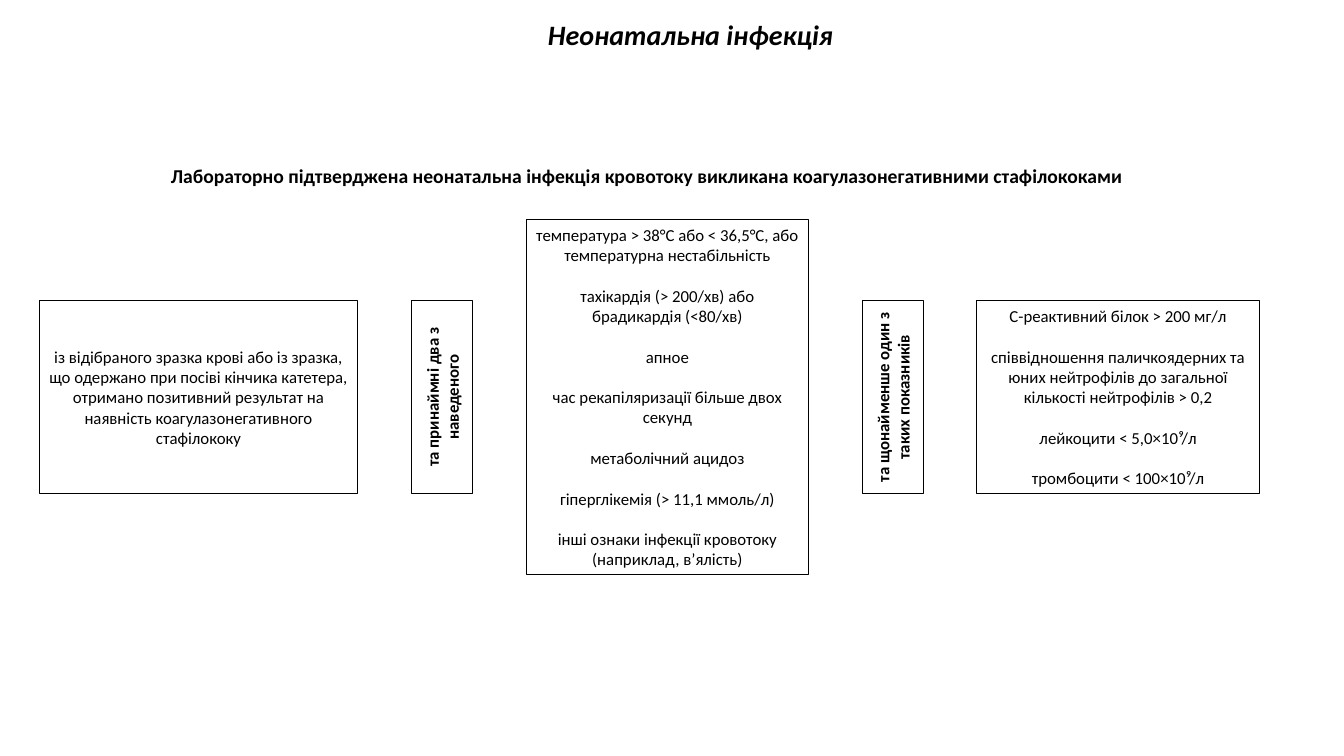
from pptx import Presentation
from pptx.dml.color import RGBColor
from pptx.enum.shapes import MSO_SHAPE
from pptx.enum.text import MSO_ANCHOR, PP_ALIGN
from pptx.util import Inches, Pt

BLACK = RGBColor(0x00, 0x00, 0x00)
FONT = "Calibri"
CRITERIA_GAP = Pt(14.6)

LEFT_MARGIN = 0.39
COLUMN_GAP = 0.53
MIDDLE_Y = 3.94

TITLE = "Неонатальна інфекція"
SUBTITLE = ("Лабораторно підтверджена неонатальна інфекція кровотоку "
            "викликана коагулазонегативними стафілококами ")

CULTURE = ["із відібраного зразка крові або із зразка, що одержано при посіві "
           "кінчика катетера, отримано позитивний результат на наявність "
           "коагулазонегативного стафілококу"]
SIGNS = [
    "температура > 38°С або < 36,5°С, або температурна нестабільність",
    "тахікардія (> 200/хв) або брадикардія (<80/хв)",
    "апное",
    "час рекапіляризації більше двох секунд",
    "метаболічний ацидоз",
    "гіперглікемія (> 11,1 ммоль/л)",
    "інші ознаки інфекції кровотоку (наприклад, в’ялість)",
]
LAB_VALUES = [
    "С-реактивний білок > 200 мг/л",
    "співвідношення паличкоядерних та юних нейтрофілів до загальної "
    "кількості нейтрофілів > 0,2",
    "лейкоцити < 5,0×10⁹/л",
    "тромбоцити < 100×10⁹/л",
]

# width, height, paragraphs, is a vertical connecting phrase
COLUMNS = [
    (3.16, 1.92, CULTURE, False),
    (0.61, 1.92, ["та принаймні два з наведеного"], True),
    (2.8, 3.53, SIGNS, False),
    (0.61, 1.92, ["та щонайменше один з таких показників"], True),
    (2.8, 1.92, LAB_VALUES, False),
]


class DefinitionSlide:
    def __init__(self, slide):
        self.shapes = slide.shapes

    def add_wording(self, frame, paragraphs, size, bold=False, italic=False):
        frame.word_wrap = True
        for index, wording in enumerate(paragraphs):
            paragraph = frame.add_paragraph() if index else frame.paragraphs[0]
            paragraph.alignment = PP_ALIGN.CENTER
            if index:
                paragraph.space_before = CRITERIA_GAP
            run = paragraph.add_run()
            run.text = wording
            run.font.name = FONT
            run.font.size = Pt(size)
            run.font.bold = bold
            run.font.italic = italic
            run.font.color.rgb = BLACK

    def heading(self, left, top, width, height, wording, size, italic=False):
        box = self.shapes.add_textbox(
            Inches(left), Inches(top), Inches(width), Inches(height))
        self.add_wording(box.text_frame, [wording], size, bold=True, italic=italic)

    def criteria_box(self, left, width, height, paragraphs, vertical):
        """Outlined box centred on MIDDLE_Y; vertical text reads upwards."""
        box = self.shapes.add_shape(
            MSO_SHAPE.RECTANGLE, Inches(left), Inches(MIDDLE_Y - height / 2),
            Inches(width), Inches(height))
        box.shadow.inherit = False
        box.fill.background()
        box.line.color.rgb = BLACK
        box.line.width = Pt(0.75)
        box.text_frame.vertical_anchor = MSO_ANCHOR.MIDDLE
        if vertical:
            box.element.txBody.bodyPr.set("vert", "vert270")
        self.add_wording(box.text_frame, paragraphs, 12, bold=vertical)


def main():
    presentation = Presentation()
    presentation.slide_width = Inches(13.33)
    presentation.slide_height = Inches(7.5)
    blank = presentation.slide_layouts[6]
    definition = DefinitionSlide(presentation.slides.add_slide(blank))

    definition.heading(1.87, 0.12, 9.96, 0.44, TITLE, 20, italic=True)
    definition.heading(LEFT_MARGIN, 1.58, 12.1, 0.34, SUBTITLE, 14)

    left = LEFT_MARGIN
    for width, height, paragraphs, vertical in COLUMNS:
        definition.criteria_box(left, width, height, paragraphs, vertical)
        left += width + COLUMN_GAP

    presentation.save("out.pptx")


if __name__ == "__main__":
    main()
